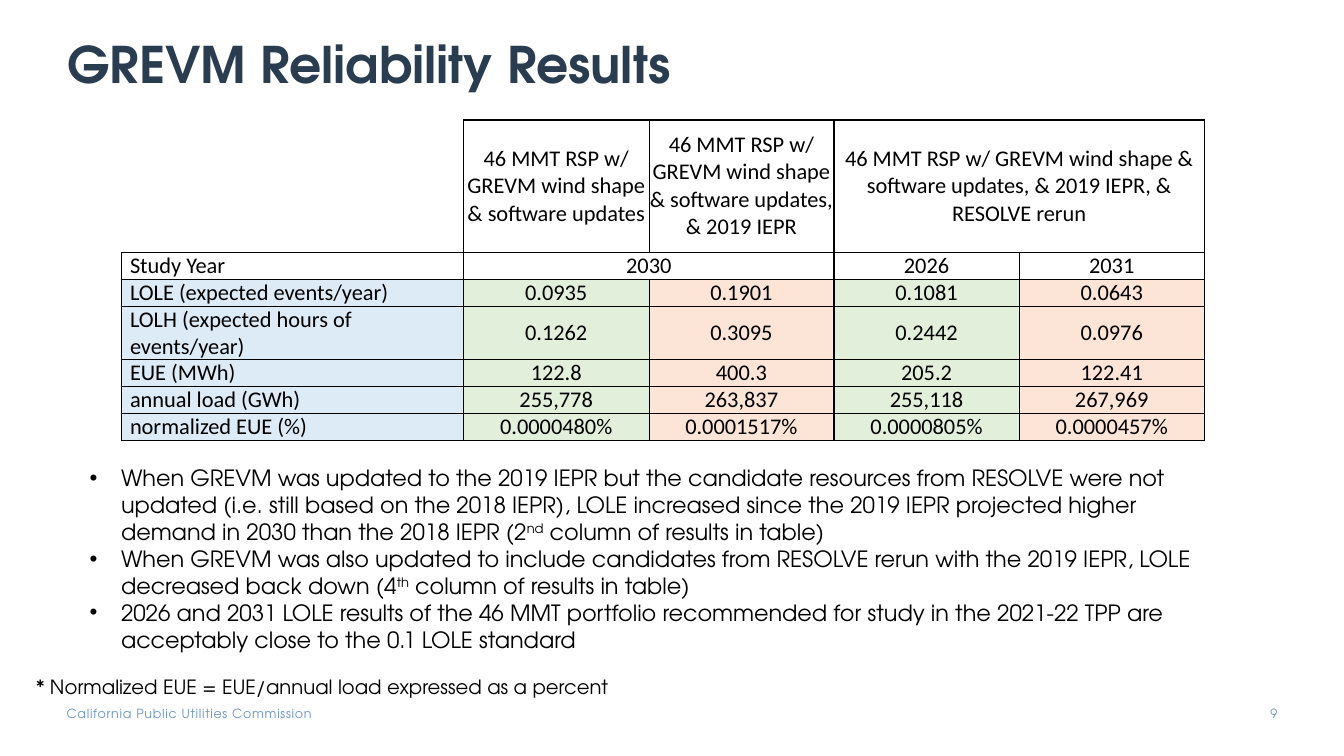
import pptx
import pptx.util
import pptx.dml.color
import pptx.enum.text
import lxml.etree
from pptx.oxml.ns import qn

TITLE = "GREVM Reliability Results"
FOOTER = "California Public Utilities Commission"
PAGE = "9"
NOTE = "* Normalized EUE = EUE/annual load expressed as a percent"
BULLETS = [
    [("When GREVM was updated to the 2019 IEPR but the candidate resources from RESOLVE were not updated "
      "(i.e. still based on the 2018 IEPR), LOLE increased since the 2019 IEPR projected higher demand in 2030 "
      "than the 2018 IEPR (2", False), ("nd", True), (" column of results in table)", False)],
    [("When GREVM was also updated to include candidates from RESOLVE rerun with the 2019 IEPR, LOLE decreased "
      "back down (4", False), ("th", True), (" column of results in table)", False)],
    [("2026 and 2031 LOLE results of the 46 MMT portfolio recommended for study in the 2021-22 TPP are acceptably "
      "close to the 0.1 LOLE standard", False)],
]
BASE = "46 MMT RSP w/ GREVM wind shape & software updates"
ROWS = [
    ["", BASE, BASE + ", & 2019 IEPR", BASE + ", & 2019 IEPR, & RESOLVE rerun", ""],
    ["Study Year", "2030", "", "2026", "2031"],
    ["LOLE (expected events/year)", "0.0935", "0.1901", "0.1081", "0.0643"],
    ["LOLH (expected hours of events/year)", "0.1262", "0.3095", "0.2442", "0.0976"],
    ["EUE (MWh)", "122.8", "400.3", "205.2", "122.41"],
    ["annual load (GWh)", "255,778", "263,837", "255,118", "267,969"],
    ["normalized EUE (%)", "0.0000480%", "0.0001517%", "0.0000805%", "0.0000457%"],
]
MERGES = [(0, 3), (1, 1)]
FILLS = ["DDEBF7", "E2EFDA", "FCE4D6", "E2EFDA", "FCE4D6"]
FIRST_FILLED = 2
HEAVY_EDGES = (1, 3, 5)

HEADING_FONT, TABLE_FONT = "TeX Gyre Adventor", "Calibri"
BLACK, NAVY, BLUE = "000000", "2A3C50", "6996C9"

TITLE_BOX = (5.03, 5.33, 90, 7.87)
FOOTER_BOX = (4.95, 93.33, 24.08, 2)
PAGE_BOX = (91.88, 93.33, 3.15, 2.67)
BULLET_BOX = (5.93, 60.8, 86.85, 26.53)
NOTE_BOX = (1.95, 88.67, 48.53, 4.53)
TABLE_BOX = (9, 15.87, 80.62, 42.53)
COL_SHARES = [25.5] + [13.78] * 4
ROW_SHARES = [17.47, 3.47, 3.47, 6.93, 3.47, 3.47, 3.6]
INDENT = 2.34

prs = pptx.Presentation()
prs.slide_width = pptx.util.Inches(13.33)
prs.slide_height = pptx.util.Inches(7.5)


def across(share):
    return int(prs.slide_width * share / 100)


def down(share):
    return int(prs.slide_height * share / 100)


def place(box):
    left, top, width, height = box
    return across(left), down(top), across(width), down(height)


def color(value):
    return pptx.dml.color.RGBColor.from_string(value)


def style(font, size, value, name=HEADING_FONT, bold=False):
    font.size = pptx.util.Pt(size)
    font.name = name
    font.bold = bold
    font.color.rgb = color(value)


def add_text(slide, box, text, size, value, inset=True):
    tf = slide.shapes.add_textbox(*place(box)).text_frame
    tf.word_wrap = True
    if not inset:
        tf.margin_left = tf.margin_right = tf.margin_top = tf.margin_bottom = 0
    tf.text = text
    for r in tf.paragraphs[0].runs:
        style(r.font, size, value)
    return tf


def add_bullet(p):
    pPr = p._p.get_or_add_pPr()
    pPr.set("marL", str(across(INDENT)))
    pPr.set("indent", str(-across(INDENT)))
    lxml.etree.SubElement(pPr, qn("a:buFont")).set("typeface", "Arial")
    lxml.etree.SubElement(pPr, qn("a:buChar")).set("char", "•")


def add_bullets(slide):
    tf = add_text(slide, BULLET_BOX, "", 16, BLACK)
    for i, parts in enumerate(BULLETS):
        p = tf.add_paragraph() if i else tf.paragraphs[0]
        add_bullet(p)
        for text, raised in parts:
            r = p.add_run()
            r.text = text
            style(r.font, 16, BLACK)
            if raised:
                r._r.get_or_add_rPr().set("baseline", "30000")


def set_borders(cell, widths):
    tcPr = cell._tc.get_or_add_tcPr()
    for side, width in zip("LRTB", widths):
        ln = lxml.etree.SubElement(tcPr, qn("a:ln" + side))
        if width:
            ln.set("w", str(pptx.util.Pt(width)))
            fill = lxml.etree.SubElement(ln, qn("a:solidFill"))
            lxml.etree.SubElement(fill, qn("a:srgbClr")).set("val", BLACK)
        else:
            lxml.etree.SubElement(ln, qn("a:noFill"))


def edge_widths(row, col):
    left, right = [1 if x in HEAVY_EDGES else 0.5 for x in (col, col + 1)]
    top, bottom = [1 if col and y in (0, len(ROWS)) else 0.5 for y in (row, row + 1)]
    if (row, col) == (0, 0):
        left = top = 0
    if (row, col) in MERGES:
        right = 1
    if (row, col - 1) in MERGES:
        left = 0
    return left, right, top, bottom


def add_results(slide):
    table = slide.shapes.add_table(len(ROWS), len(COL_SHARES), *place(TABLE_BOX)).table
    table.first_row = table.horz_banding = False
    for column, share in zip(table.columns, COL_SHARES):
        column.width = across(share)
    for row, share in zip(table.rows, ROW_SHARES):
        row.height = down(share)
    for row, col in MERGES:
        table.cell(row, col).merge(table.cell(row, col + 1))
    for row, values in enumerate(ROWS):
        for col, value in enumerate(values):
            cell = table.cell(row, col)
            cell.margin_left = pptx.util.Inches(0 if col else 0.09)
            cell.margin_right = cell.margin_top = cell.margin_bottom = 0
            cell.vertical_anchor = pptx.enum.text.MSO_ANCHOR.MIDDLE
            set_borders(cell, edge_widths(row, col))
            if row >= FIRST_FILLED:
                cell.fill.solid()
                cell.fill.fore_color.rgb = color(FILLS[col])
            else:
                cell.fill.background()
            if value:
                cell.text = value
                p = cell.text_frame.paragraphs[0]
                p.alignment = pptx.enum.text.PP_ALIGN.CENTER if col else pptx.enum.text.PP_ALIGN.LEFT
                style(p.runs[0].font, 16, BLACK, TABLE_FONT)


def add_title(slide):
    sp = slide.shapes.title
    sp.left, sp.top, sp.width, sp.height = place(TITLE_BOX)
    tf = sp.text_frame
    tf.text = TITLE
    tf.margin_left = 0
    tf.word_wrap = True
    tf.auto_size = pptx.enum.text.MSO_AUTO_SIZE.NONE
    tf.vertical_anchor = pptx.enum.text.MSO_ANCHOR.BOTTOM
    p = tf.paragraphs[0]
    p.alignment = pptx.enum.text.PP_ALIGN.LEFT
    p.line_spacing = 0.9
    style(p.runs[0].font, 36, NAVY, bold=True)


def main():
    slide = prs.slides.add_slide(prs.slide_layouts[5])
    add_title(slide)
    footer = add_text(slide, FOOTER_BOX, FOOTER, 9, BLUE, inset=False)
    footer.paragraphs[0].runs[0]._r.get_or_add_rPr().set("spc", "50")
    page = add_text(slide, PAGE_BOX, PAGE, 9, BLUE, inset=False)
    page.paragraphs[0].alignment = pptx.enum.text.PP_ALIGN.RIGHT
    add_bullets(slide)
    add_text(slide, NOTE_BOX, NOTE, 14, BLACK)
    add_results(slide)
    prs.save("out.pptx")


if __name__ == "__main__":
    main()
